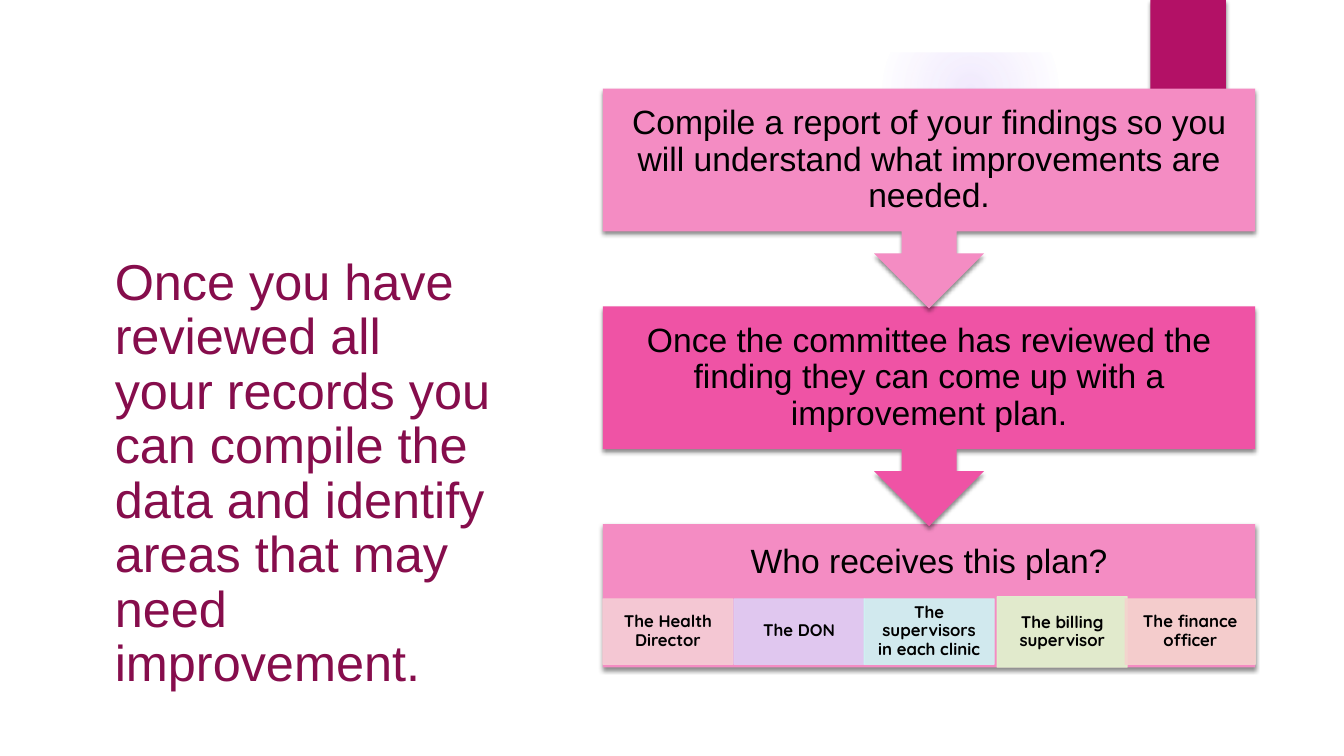
import pptx
import pptx.util
import pptx.dml.color
import pptx.enum.shapes
import pptx.enum.text
import pptx.oxml
import pptx.oxml.ns

PX = 9144
SLIDE_SIZE = (1333, 750)
RECTANGLE = pptx.enum.shapes.MSO_SHAPE.RECTANGLE
OVAL = pptx.enum.shapes.MSO_SHAPE.OVAL
CALLOUT = pptx.enum.shapes.MSO_SHAPE.DOWN_ARROW_CALLOUT
CENTER = pptx.enum.text.PP_ALIGN.CENTER
LEFT = pptx.enum.text.PP_ALIGN.LEFT

TITLE = ("Once you have reviewed all your records you can compile the data "
         "and identify areas that may need improvement.")
STEPS = [
    ("Compile a report of your findings so you will understand what improvements are needed.", "F48CC3"),
    ("Once the committee has reviewed the finding they can come up with a improvement plan.", "EF53A5"),
]
QUESTION = ("Who receives this plan?", "F48CC3")
RECIPIENTS = [
    ("The Health Director", "F4CED5", (598, 594, 129, 65)),
    ("The DON", "DECEF4", (728, 594, 129, 65)),
    ("The supervisors in each clinic", "CEF4F3", (857, 594, 129, 65)),
    ("The billing supervisor", "E0F5CE", (989, 592, 129, 70)),
    ("The finance officer", "F5D3CE", (1116, 594, 129, 65)),
]
GLOW_STOPS = [(0, 14), (36, 7), (73, 0)]
FLOW_LEFT, FLOW_TOP, FLOW_WIDTH = 598, 88, 647
STEP_PITCH, STEP_HEIGHT, BOX_HEIGHT, QUESTION_HEIGHT = 216, 218, 142, 77
FLOW_INSET = 19


def color(hex_string):
    return pptx.dml.color.RGBColor.from_string(hex_string)


def element(xml):
    return pptx.oxml.parse_xml(xml.replace(" ", f' {pptx.oxml.ns.nsdecls("a")} ', 1))


def add_alpha(fill, percent):
    source = fill._xPr.find(".//" + pptx.oxml.ns.qn("a:srgbClr"))
    source.append(element(f'<a:alpha val="{percent * 1000}"/>'))


def add_block(slide, kind, box, fill, shadow=False, alpha=None):
    shape = slide.shapes.add_shape(kind, *(value * PX for value in box))
    shape.shadow.inherit = False
    shape.fill.solid()
    shape.fill.fore_color.rgb = color(fill)
    shape.line.fill.background()
    if alpha:
        add_alpha(shape.fill, alpha)
        shape.line.color.rgb = color(fill)
        shape.line.width = pptx.util.Pt(0.75)
        add_alpha(shape.line.fill, alpha)
    if shadow:
        effects = shape._element.spPr.find(pptx.oxml.ns.qn("a:effectLst"))
        effects.append(element(
            '<a:outerShdw blurRad="38100" dist="25400" dir="5400000" rotWithShape="0">'
            '<a:srgbClr val="000000"><a:alpha val="45000"/></a:srgbClr></a:outerShdw>'))
    return shape


def add_glow(slide, box, hex_string):
    shape = add_block(slide, OVAL, box, hex_string)
    stops = "".join(
        f'<a:gs pos="{position * 1000}"><a:srgbClr val="{hex_string}">'
        f'<a:alpha val="{alpha * 1000}"/></a:srgbClr></a:gs>' for position, alpha in GLOW_STOPS)
    gradient = element(
        f'<a:gradFill rotWithShape="1"><a:gsLst>{stops}</a:gsLst><a:path path="circle">'
        '<a:fillToRect l="50000" t="50000" r="50000" b="50000"/></a:path></a:gradFill>')
    properties = shape._element.spPr
    properties.replace(properties.find(pptx.oxml.ns.qn("a:solidFill")), gradient)


def set_text(shape, text, size, font="Arial", fill="000000", bold=False,
             align=CENTER, insets=(10, 5, 10, 5)):
    frame = shape.text_frame
    frame.word_wrap = True
    frame.vertical_anchor = pptx.enum.text.MSO_ANCHOR.MIDDLE
    frame.margin_left, frame.margin_top, frame.margin_right, frame.margin_bottom = (
        value * PX for value in insets)
    paragraph = frame.paragraphs[0]
    paragraph.alignment = align
    paragraph.line_spacing = 0.9
    run = paragraph.add_run()
    run.text = text
    run.font.name = font
    run.font.size = pptx.util.Pt(size)
    run.font.bold = bold
    run.font.color.rgb = color(fill)


def main():
    presentation = pptx.Presentation()
    presentation.slide_width, presentation.slide_height = (value * PX for value in SLIDE_SIZE)
    slide = presentation.slides.add_slide(presentation.slide_layouts[6])

    add_glow(slide, (875, 1, 175, 175), "9B6BF2")
    add_block(slide, RECTANGLE, (0, 0, SLIDE_SIZE[0], 52), "FFFFFF")
    add_block(slide, RECTANGLE, (1141, 0, 75, 125), "B31166", shadow=True)

    title = slide.shapes.add_textbox(*(value * PX for value in (104, 225, 393, 492)))
    set_text(title, TITLE, 36, fill="860D4C", align=LEFT)

    question_top = FLOW_TOP + len(STEPS) * STEP_PITCH
    text, fill = QUESTION
    question = add_block(slide, RECTANGLE, (FLOW_LEFT, question_top, FLOW_WIDTH, BOX_HEIGHT),
                         fill, shadow=True)
    below_text = BOX_HEIGHT - QUESTION_HEIGHT + FLOW_INSET
    set_text(question, text, 24, insets=(FLOW_INSET, FLOW_INSET, FLOW_INSET, below_text))

    for text, fill, box in RECIPIENTS:
        recipient = add_block(slide, RECTANGLE, box, fill, alpha=90)
        set_text(recipient, text, 12, font="Quicksand", bold=True, insets=(9, 2, 9, 2))

    for index, (text, fill) in reversed(list(enumerate(STEPS))):
        top = FLOW_TOP + index * STEP_PITCH
        step = add_block(slide, CALLOUT, (FLOW_LEFT, top, FLOW_WIDTH, STEP_HEIGHT), fill, shadow=True)
        set_text(step, text, 24, insets=(FLOW_INSET,) * 4)

    presentation.save("out.pptx")


if __name__ == "__main__":
    main()
